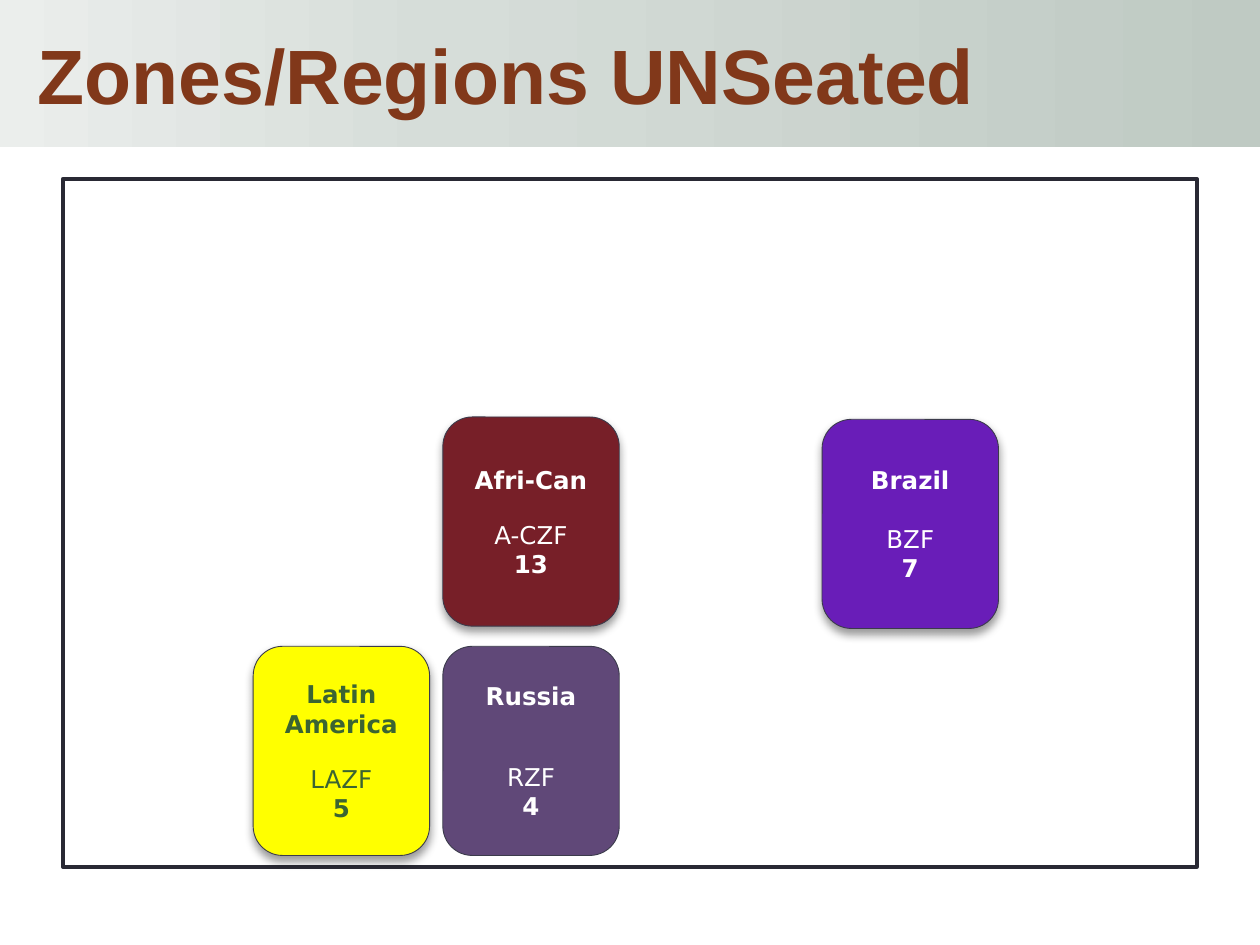
from copy import deepcopy
from pptx import Presentation
from pptx.dml.color import RGBColor
from pptx.enum.shapes import MSO_SHAPE as Shape
from pptx.enum.text import MSO_ANCHOR as Anchor, PP_ALIGN as Align
from pptx.oxml import parse_xml
from pptx.oxml.ns import nsdecls, qn
from pptx.util import Inches, Pt


def paint(color, code):
    color.rgb = RGBColor.from_string(code)


def add_box(kind, left, top, width, height):
    box = slide.shapes.add_shape(
        kind, Inches(left), Inches(top), Inches(width), Inches(height))
    box.shadow.inherit = False
    box.fill.solid()
    box.text_frame.word_wrap = True
    box.text_frame.vertical_anchor = Anchor.MIDDLE
    return box


deck = Presentation()
deck.slide_width, deck.slide_height = Inches(10), Inches(7.5)
slide = deck.slides.add_slide(deck.slide_layouts[6])

# Title band, shaded from left to right
band = add_box(Shape.RECTANGLE, 0, 0, 10, 1.17)
band.line.fill.background()
band.fill.gradient()
band.fill.gradient_angle = 0
stops = band._element.spPr.find(qn("a:gradFill")).find(qn("a:gsLst"))
stops.append(deepcopy(stops[0]))
shades = [(0, "EBEEEC"), (0.35, "D6DDD9"), (1, "BFCAC3")]
for stop, (place, code) in zip(band.fill.gradient_stops, shades):
    stop.position = place
    paint(stop.color, code)

frame = band.text_frame
frame.margin_left = Inches(0.3)
frame.text = "Zones/Regions UNSeated"
title = frame.paragraphs[0]
title.alignment = Align.LEFT
title.font.name, title.font.size, title.font.bold = "Arial", Pt(44), True
paint(title.font.color, "81381A")

# Frame around the cards
border = add_box(Shape.RECTANGLE, 0.5, 1.42, 9, 5.46)
paint(border.fill.fore_color, "FFFFFF")
paint(border.line.color, "292934")
border.line.width = Pt(2.25)

# Zone cards: column, row, fill, ink, name, code, seats, gap in points, shadow
LEFT, TOP, COL, ROW = 2.01, 3.31, 1.505, 1.82
WHITE = "FFFFFF"
cards = [
    (1, 1, "604878", WHITE, "Russia", "RZF", "4", 29, False),
    (0, 1, "FFFF00", "3B6432", "Latin America", "LAZF", "5", 14.5, True),
    (1, 0, "771F28", WHITE, "Afri-Can", "A-CZF", "13", 14.5, True),
    (3, 0.01, "691DB8", WHITE, "Brazil", "BZF", "7", 17, True),
]
for col, row, fill, ink, name, code, seats, gap, shade in cards:
    card = add_box(Shape.ROUNDED_RECTANGLE,
                   LEFT + col * COL, TOP + row * ROW, 1.4, 1.66)
    paint(card.fill.fore_color, fill)
    paint(card.line.color, "3B3B4B")
    card.line.width = Pt(0.5)
    if shade:
        card._element.spPr.find(qn("a:effectLst")).append(parse_xml(
            f'<a:outerShdw {nsdecls("a")} blurRad="{Pt(5.2)}" dist="{Pt(3)}" '
            'dir="5400000" rotWithShape="0"><a:srgbClr val="000000">'
            '<a:alpha val="40000"/></a:srgbClr></a:outerShdw>'))
    card.text_frame.text = "\n".join([name, code, seats])
    for line in card.text_frame.paragraphs:
        line.alignment = Align.CENTER
        font = line.runs[0].font
        font.name, font.size = "DejaVu Sans", Pt(14)
        font.bold = line.text != code
        paint(font.color, ink)
    card.text_frame.paragraphs[1].space_before = Pt(gap)

deck.save("out.pptx")
